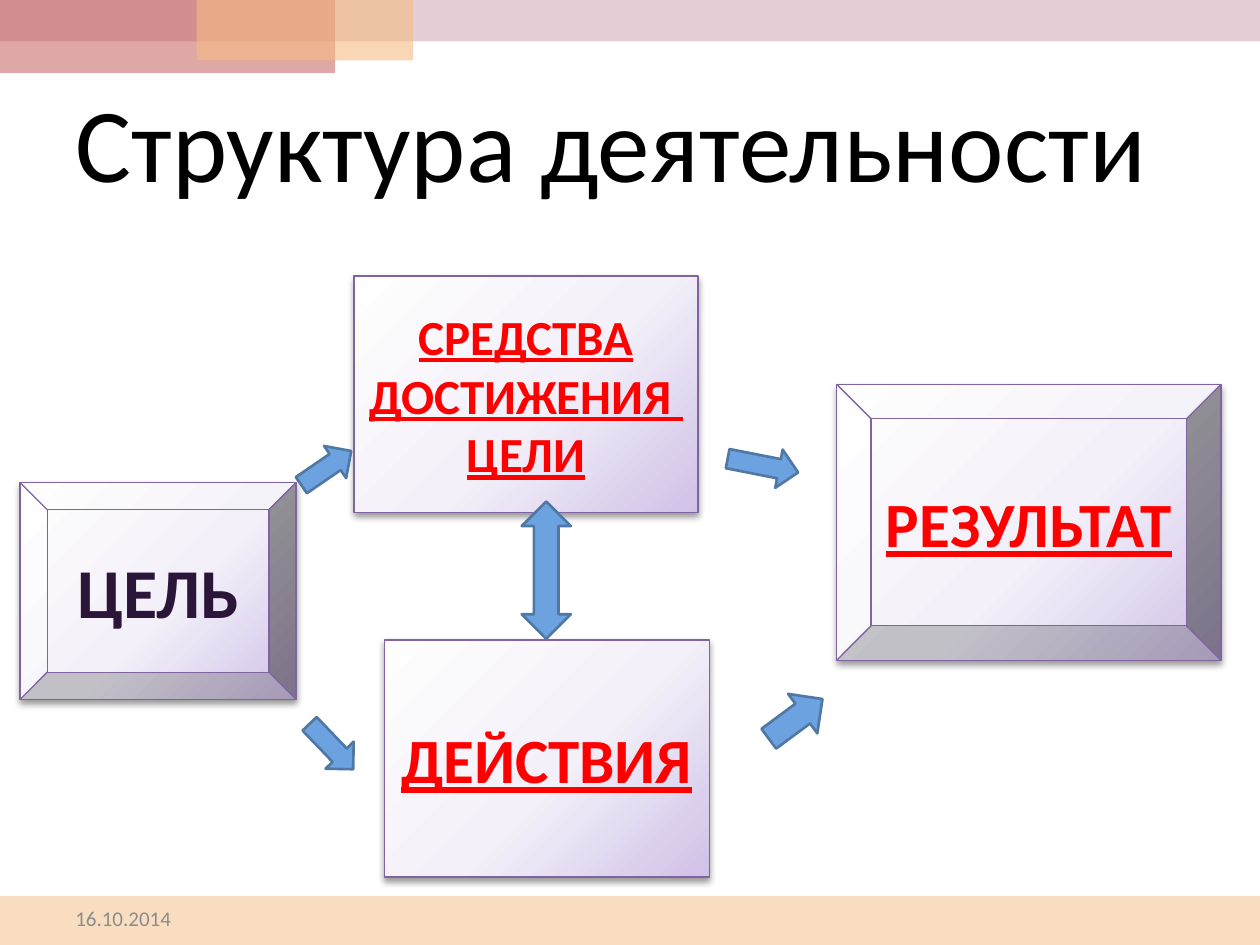
from lxml.etree import SubElement
from pptx import Presentation
from pptx.dml.color import RGBColor
from pptx.enum.shapes import MSO_SHAPE as Shape
from pptx.enum.text import MSO_ANCHOR as Anchor, PP_ALIGN as Align
from pptx.oxml import parse_xml
from pptx.oxml.ns import nsdecls, qn
from pptx.util import Inches, Pt

FONT = "Calibri"
BLACK = RGBColor(0x00, 0x00, 0x00)
GRAY = RGBColor(0x8C, 0x8C, 0x8C)
RED = RGBColor(0xFF, 0x00, 0x00)
PLUM = RGBColor(0x2B, 0x16, 0x39)
PURPLE = RGBColor(0x80, 0x64, 0xA2)
BLUE = RGBColor(0x6B, 0xA2, 0xDF)
DARK_BLUE = RGBColor(0x4F, 0x78, 0xA5)
PEACH = RGBColor(0xF5, 0xBC, 0x83)
PINK = RGBColor(0xCC, 0x9E, 0xAC)
BRICK = RGBColor(0xC0, 0x50, 0x4D)
LILAC_STOPS = [
    (0, RGBColor(0xFE, 0xFE, 0xFE)),
    (55, RGBColor(0xF3, 0xF0, 0xF9)),
    (100, RGBColor(0xD0, 0xC1, 0xE7)),
]

# Left, top, width, height in inches
BANDS = [  # place, colour, opacity in percent
    ((0, 7.11, 10, 0.39), PEACH, 50),
    ((0, 0, 10, 0.33), PINK, 50),
    ((0, 0, 2.66, 0.58), BRICK, 50),
    ((1.56, 0, 1.72, 0.48), PEACH, 60),
]
STAGES = [  # outline, place, lines, size, colour, underlined
    (Shape.RECTANGLE, (2.81, 2.19, 2.73, 1.88),
     ["СРЕДСТВА ДОСТИЖЕНИЯ ", "ЦЕЛИ"], 28, RED, True),
    (Shape.RECTANGLE, (3.05, 5.08, 2.58, 1.88), ["ДЕЙСТВИЯ"], 36, RED, True),
    (Shape.BEVEL, (6.64, 3.05, 3.05, 2.19), ["РЕЗУЛЬТАТ"], 36, RED, True),
    (Shape.BEVEL, (0.16, 3.83, 2.19, 1.72), ["ЦЕЛЬ"], 40, PLUM, False),
]
ARROWS = [  # outline, place, rotation
    (Shape.RIGHT_ARROW, (2.35, 3.56, 0.48, 0.31), 325.6),
    (Shape.RIGHT_ARROW, (2.38, 5.77, 0.5, 0.31), 46.2),
    (Shape.RIGHT_ARROW, (5.77, 3.54, 0.57, 0.31), 11.1),
    (Shape.UP_DOWN_ARROW, (4.14, 3.98, 0.39, 1.09), 0),
    (Shape.RIGHT_ARROW, (6.05, 5.51, 0.53, 0.39), 323.5),
]


def inches(place):
    return [Inches(length) for length in place]


def write(box, lines, size, color, align, bold=False, underline=False):
    frame = box.text_frame
    frame.word_wrap = True
    frame.vertical_anchor = Anchor.MIDDLE
    frame.text = "\n".join(lines)
    for para in frame.paragraphs:
        para.alignment = align
        font = para.font
        font.name, font.size, font.bold = FONT, Pt(size), bold
        font.underline = underline
        font.color.rgb = color


def add_solid(page, outline, place, color):
    shape = page.shapes.add_shape(outline, *inches(place))
    shape.shadow.inherit = False
    shape.fill.solid()
    shape.fill.fore_color.rgb = color
    return shape


def add_band(page, place, color, opacity):
    band = add_solid(page, Shape.RECTANGLE, place, color)
    band.line.fill.background()
    tint = band.fill._xPr.find(qn("a:solidFill"))[0]
    SubElement(tint, qn("a:alpha"), val=str(opacity * 1000))


def add_arrow(page, outline, place, rotation):
    arrow = add_solid(page, outline, place, BLUE)
    arrow.line.color.rgb = DARK_BLUE
    arrow.line.width = Pt(1.5)
    arrow.rotation = rotation


def shade(shape):
    """Give the shape a radial lilac gradient and a soft shadow below."""
    stops = "".join(
        f'<a:gs pos="{share * 1000}"><a:srgbClr val="{color}"/></a:gs>'
        for share, color in LILAC_STOPS)
    gradient = parse_xml(
        f'<a:gradFill {nsdecls("a")} rotWithShape="1"><a:gsLst>{stops}</a:gsLst>'
        '<a:path path="circle"><a:fillToRect l="-40000" t="-90000" '
        'r="140000" b="190000"/></a:path></a:gradFill>')
    properties = shape.fill._xPr
    properties.replace(properties.find(qn("a:solidFill")), gradient)
    shadow = parse_xml(
        f'<a:outerShdw {nsdecls("a")} blurRad="{Pt(4)}" dist="{Pt(2)}" '
        'dir="5400000" rotWithShape="0"><a:srgbClr val="000000">'
        '<a:alpha val="40000"/></a:srgbClr></a:outerShdw>')
    properties.find(qn("a:effectLst")).append(shadow)


def add_stage(page, outline, place, lines, size, color, underline):
    stage = add_solid(page, outline, place, LILAC_STOPS[0][1])
    shade(stage)
    stage.line.color.rgb = PURPLE
    stage.line.width = Pt(0.75)
    write(stage, lines, size, color, Align.CENTER, True, underline)


def main():
    deck = Presentation()
    deck.slide_width, deck.slide_height = Inches(10), Inches(7.5)
    page = deck.slides.add_slide(deck.slide_layouts[5])

    # Decorative bands
    for band in BANDS:
        add_band(page, *band)

    # Title
    title = page.shapes.title
    title.left, title.top, title.width, title.height = inches((0.16, 0.59, 9.38, 1.05))
    write(title, ["Структура деятельности"], 60, BLACK, Align.CENTER)

    # Stages of the activity and the arrows between them
    for stage in STAGES:
        add_stage(page, *stage)
    for arrow in ARROWS:
        add_arrow(page, *arrow)

    # Date
    date = page.shapes.add_textbox(*inches((0.5, 7.15, 2.33, 0.27)))
    write(date, ["16.10.2014"], 12, GRAY, Align.LEFT)

    deck.save("out.pptx")


if __name__ == "__main__":
    main()
